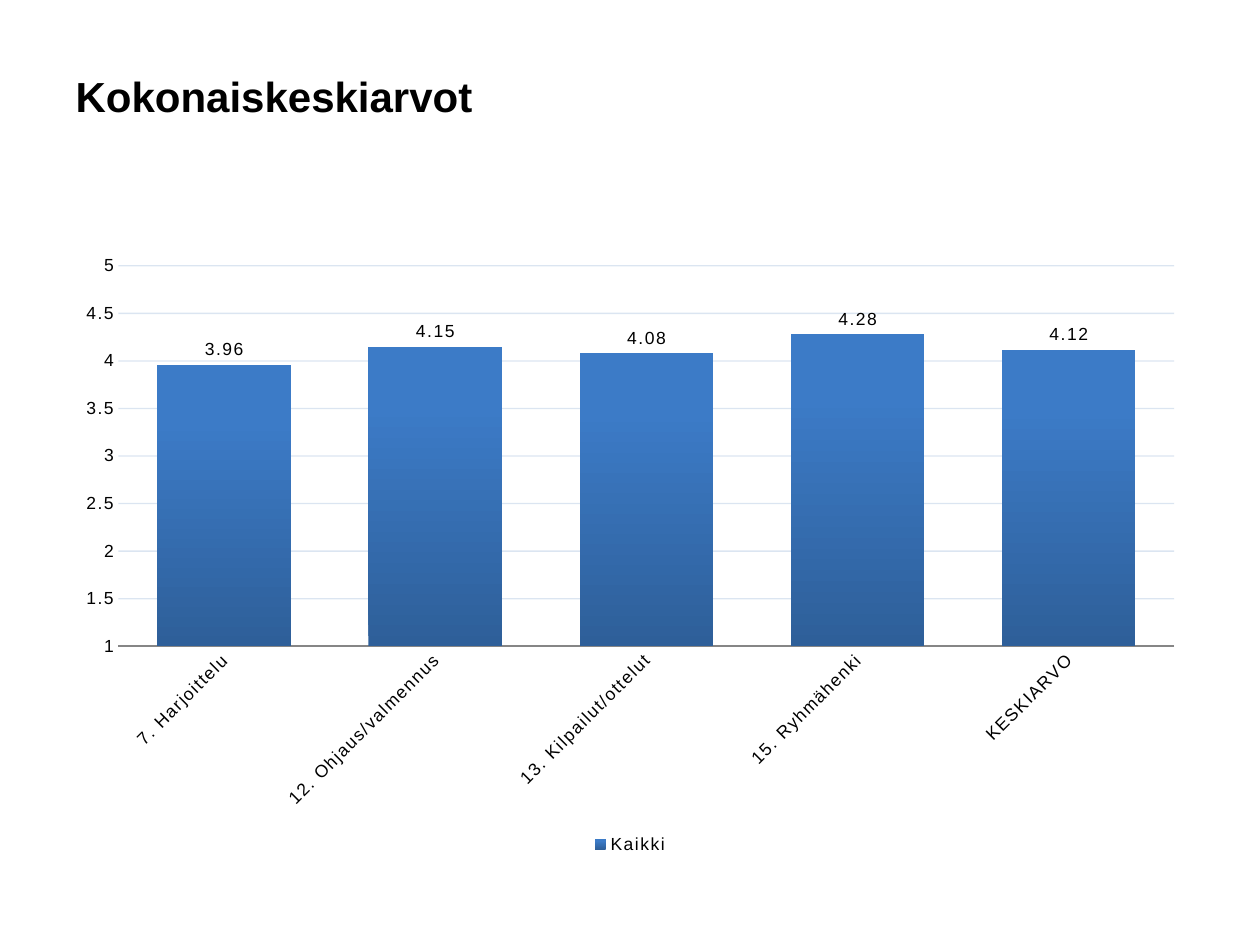
from copy import deepcopy

from lxml import etree
from pptx import Presentation
from pptx.chart.data import CategoryChartData
from pptx.dml.color import RGBColor
from pptx.enum.chart import (XL_CHART_TYPE, XL_LABEL_POSITION,
                             XL_LEGEND_POSITION, XL_TICK_MARK)
from pptx.enum.text import MSO_ANCHOR, PP_ALIGN
from pptx.oxml import parse_xml
from pptx.oxml.ns import nsdecls, qn
from pptx.util import Inches, Pt

COLORS = {
    "text": "000000",
    "grid": "4F81BD",
    "axis": "868686",
    "bar_bottom": "2E5F99",
    "bar_upper": "3C7BC7",
    "bar_top": "3C7AC9",
}
AVERAGES = {
    "7. Harjoittelu": 3.96,
    "12. Ohjaus/valmennus": 4.15,
    "13. Kilpailut/ottelut": 4.08,
    "15. Ryhmähenki": 4.28,
    "KESKIARVO": 4.12,
}
# Left, top, width and height on the slide, in inches
CHART_BOX = (0.5, 1.94, 9, 4.88)
PLOT_BOX = (0.94, 2.11, 8.38, 3.02)


def rgb(name):
    return RGBColor.from_string(COLORS[name])


def format_font(font, size=10, bold=False):
    font.name = "Arial"
    font.size = Pt(size)
    font.bold = bold
    font.color.rgb = rgb("text")


def write_text(shape, text, align=PP_ALIGN.LEFT, anchor=MSO_ANCHOR.MIDDLE, **font_format):
    frame = shape.text_frame
    frame.word_wrap = True
    frame.vertical_anchor = anchor
    paragraph = frame.paragraphs[0]
    paragraph.alignment = align
    run = paragraph.add_run()
    run.text = text
    format_font(run.font, **font_format)


def add_title(slide, text):
    title = slide.shapes.title
    title.left, title.top = Inches(0.5), Inches(0.36)
    title.width, title.height = Inches(9), Inches(0.8)
    write_text(title, text, size=24, bold=True)


def style_axes(chart):
    values, categories = chart.value_axis, chart.category_axis
    for axis in (values, categories):
        axis.major_tick_mark = axis.minor_tick_mark = XL_TICK_MARK.NONE
        format_font(axis.tick_labels.font)

    values.minimum_scale, values.maximum_scale, values.major_unit = 1, 5, 0.5
    values.format.line.fill.background()
    grid = values.major_gridlines.format.line
    grid.width = Pt(0.75)
    grid.color.rgb = rgb("grid")
    grid_color = chart.element.find(".//" + qn("c:majorGridlines")).find(
        ".//" + qn("a:srgbClr"))
    etree.SubElement(grid_color, qn("a:alpha"), val="20000")

    categories.format.line.color.rgb = rgb("axis")
    categories.format.line.width = Pt(1)
    category_text = chart.element.find(".//" + qn("c:catAx")).find(qn("c:txPr"))
    category_text.find(qn("a:bodyPr")).set("rot", "-2700000")


def style_bars(chart):
    plot = chart.plots[0]
    plot.gap_width = 58
    plot.vary_by_categories = False
    bars = plot.series[0]
    fill = bars.format.fill
    fill.gradient()
    fill.gradient_angle = 90
    stop_list = chart.element.find(".//" + qn("a:gsLst"))
    stop_list.append(deepcopy(stop_list[-1]))
    stops = (("bar_bottom", 0), ("bar_upper", 0.8), ("bar_top", 1))
    for stop, (name, position) in zip(fill.gradient_stops, stops):
        stop.color.rgb = rgb(name)
        stop.position = position

    labels = bars.data_labels
    labels.show_value = True
    labels.position = XL_LABEL_POSITION.OUTSIDE_END
    format_font(labels.font)


def place_plot_area(chart):
    """Fix the inner plot area, in fractions of the chart's size."""
    chart_left, chart_top, chart_width, chart_height = CHART_BOX
    left, top, width, height = PLOT_BOX
    fractions = {
        "x": (left - chart_left) / chart_width,
        "y": (top - chart_top) / chart_height,
        "w": width / chart_width,
        "h": height / chart_height,
    }
    edges = "".join(f'<c:{key} val="{value}"/>' for key, value in fractions.items())
    layout = parse_xml(
        f'<c:layout {nsdecls("c")}><c:manualLayout><c:layoutTarget val="inner"/>'
        f'<c:xMode val="edge"/><c:yMode val="edge"/>{edges}'
        f'</c:manualLayout></c:layout>')
    plot_area = chart.element.find(".//" + qn("c:plotArea"))
    for old_layout in plot_area.findall(qn("c:layout")):
        plot_area.remove(old_layout)
    plot_area.insert(0, layout)


def add_average_chart(slide):
    data = CategoryChartData(number_format="General")
    data.categories = list(AVERAGES)
    data.add_series("Kaikki", list(AVERAGES.values()))
    chart = slide.shapes.add_chart(
        XL_CHART_TYPE.COLUMN_CLUSTERED, *map(Inches, CHART_BOX), data).chart
    chart.has_title = False
    format_font(chart.font)
    chart.has_legend = True
    chart.legend.position = XL_LEGEND_POSITION.BOTTOM
    chart.legend.include_in_layout = False
    format_font(chart.legend.font)
    style_axes(chart)
    style_bars(chart)
    place_plot_area(chart)
    for text_format in chart.element.iter(qn("a:defRPr")):
        text_format.set("spc", "100")


def main():
    presentation = Presentation()
    presentation.slide_width, presentation.slide_height = Inches(10), Inches(7.5)
    slide = presentation.slides.add_slide(presentation.slide_layouts[5])
    add_title(slide, "Kokonaiskeskiarvot")
    add_average_chart(slide)
    presentation.save("out.pptx")


if __name__ == "__main__":
    main()
